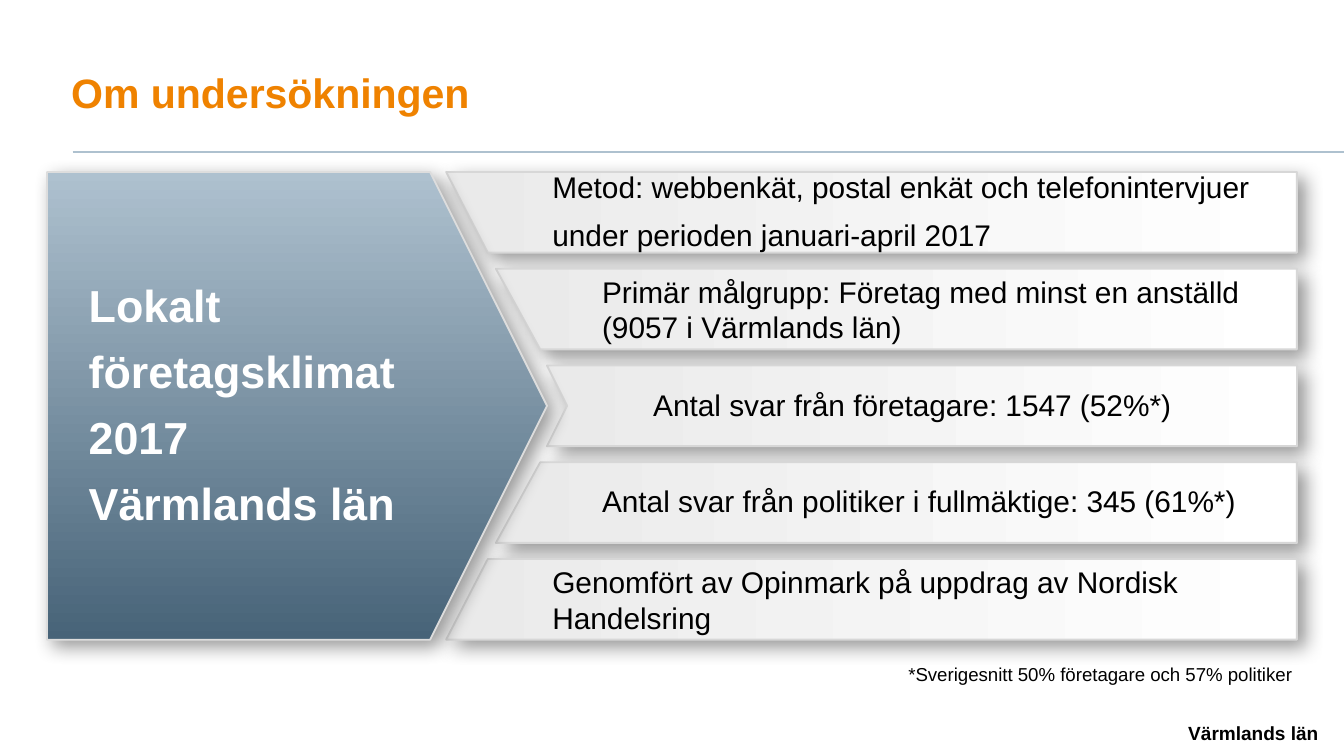
import pptx
import pptx.util
import pptx.dml.color
import pptx.enum.shapes
import pptx.enum.text
import pptx.oxml
import pptx.oxml.ns
from lxml import etree

Inches = pptx.util.Inches
Pt = pptx.util.Pt
qn = pptx.oxml.ns.qn
KIND = pptx.enum.shapes.MSO_SHAPE
ALIGN = pptx.enum.text.PP_ALIGN
ANCHOR = pptx.enum.text.MSO_ANCHOR
SIZE = pptx.enum.text.MSO_AUTO_SIZE

# Text, left edge, slant as (top inset, bottom inset, notch depth), spaced lines
BANDS = [
    ("Metod: webbenkät, postal enkät och telefonintervjuer\n"
     "under perioden januari-april 2017", 3.32, (0, 0.31, 0), True),
    ("Primär målgrupp: Företag med minst en anställd\n"
     "(9057 i Värmlands län)", 3.69, (0, 0.33, 0), False),
    ("Antal svar från företagare: 1547 (52%*)", 4.07, (0, 0, 0.15), True),
    ("Antal svar från politiker i fullmäktige: 345 (61%*)",
     3.69, (0.33, 0, 0), True),
    ("Genomfört av Opinmark på uppdrag av Nordisk Handelsring",
     3.32, (0.31, 0, 0), False),
]


def color(text):
    return pptx.dml.color.RGBColor.from_string(text)


def write(shape, text, size, ink, bold=False, align=ALIGN.LEFT,
          anchor=ANCHOR.MIDDLE, inset=(0, 0, 0, 0), wrap=True, loose=False,
          fit=SIZE.NONE):
    """Fill a shape with text; inset is left, top, right, bottom."""
    frame = shape.text_frame
    frame.text = text
    frame.word_wrap = wrap
    frame.auto_size = fit
    frame.vertical_anchor = anchor
    (frame.margin_left, frame.margin_top,
     frame.margin_right, frame.margin_bottom) = map(Inches, inset)
    for par in frame.paragraphs:
        par.alignment = align
        if loose:
            par.line_spacing = 0.95
            par.space_after = Pt(8)
        for run in par.runs:
            run.font.name = "Arial"
            run.font.size = Pt(size)
            run.font.bold = bold
            run.font.color.rgb = color(ink)


def paint(shape, first, last, angle, edge):
    """Give a shape a gradient, a thin edge and a soft shadow."""
    shape.fill.gradient()
    shape.fill.gradient_angle = angle
    for stop, tone in zip(shape.fill.gradient_stops, (first, last)):
        stop.color.rgb = color(tone)
    shape.line.color.rgb = color(edge)
    shape.line.width = Pt(1)
    shape.shadow.inherit = False
    effects = shape._element.spPr.find(qn("a:effectLst"))
    cast = etree.SubElement(
        effects, qn("a:outerShdw"), blurRad=str(Pt(10)), dist=str(Pt(5)),
        dir="2700000", algn="tl", rotWithShape="0")
    tone = etree.SubElement(cast, qn("a:srgbClr"), val="000000")
    etree.SubElement(tone, qn("a:alpha"), val="40000")


def add_head(slide, left, top, width, height):
    """Title with a rule that runs to the slide edge."""
    title = slide.shapes.title
    title.left, title.top = Inches(left), Inches(top)
    title.width, title.height = Inches(width), Inches(height)
    write(title, "Om undersökningen", 22, "EF8200", bold=True,
          anchor=ANCHOR.BOTTOM, inset=(0, 0, 0, 0.04))
    level = Inches(top + height + 0.22)
    rule = slide.shapes.add_connector(
        pptx.enum.shapes.MSO_CONNECTOR.STRAIGHT,
        Inches(left + 0.01), level, Inches(10), level)
    rule.line.color.rgb = color("AEC1CF")
    rule.line.width = Pt(1)
    etree.SubElement(rule._element.spPr, qn("a:effectLst"))


def add_band(slide, left, top, right, height, text, slant, loose):
    """Bar whose left end follows the point of the arrow."""
    upper, lower, notch = slant
    points = [(left + upper, top), (right, top), (right, top + height),
              (left + lower, top + height)]
    if notch:
        points.append((left + notch, top + height / 2))
    points = [(Inches(x), Inches(y)) for x, y in points]
    form = slide.shapes.build_freeform(*points[0])
    form.add_line_segments(points[1:], close=True)
    band = form.convert_to_shape()
    paint(band, "EAEAEA", "FFFFFF", 0, "D7D7D7")
    write(band, text, 16, "000000", inset=(0.79, 0.04, 0.04, 0.04),
          loose=loose)


def add_body(slide, left, top, width, height):
    """Five bars beside a large arrow."""
    thick = 0.6
    pitch = (height - thick) / (len(BANDS) - 1)
    for row, (text, start, slant, loose) in enumerate(BANDS):
        add_band(slide, start, top + row * pitch, left + width, thick,
                 text, slant, loose)
    arrow = slide.shapes.add_shape(
        KIND.PENTAGON, Inches(left), Inches(top), Inches(3.72),
        Inches(height))
    arrow.adjustments[0] = 0.25
    paint(arrow, "AEC1CF", "476378", 270, "DDDDDD")
    write(arrow, "Lokalt\nföretagsklimat\n2017\nVärmlands län", 24, "FFFFFF",
          bold=True, inset=(0.31, 0, 0, 0), loose=True)


def add_notes(slide, left, top, width, height):
    """Footnote and region name below the bars."""
    note = slide.shapes.add_textbox(
        Inches(left + 1.48), Inches(top), Inches(3.09), Inches(0.27))
    write(note, "*Sverigesnitt 50% företagare och 57% politiker", 10,
          "000000", anchor=ANCHOR.TOP, inset=(0.1, 0.05, 0.1, 0.05),
          wrap=False, fit=SIZE.SHAPE_TO_FIT_TEXT)
    region = slide.shapes.add_textbox(
        Inches(left), Inches(top + height - 0.3), Inches(width), Inches(0.3))
    write(region, "Värmlands län", 10.2, "000000", bold=True,
          align=ALIGN.RIGHT, anchor=ANCHOR.BOTTOM)


def main():
    deck = pptx.Presentation()
    # Widescreen page, 16:9
    deck.slide_width, deck.slide_height = Inches(10), Inches(10 * 9 / 16)
    slide = deck.slides.add_slide(deck.slide_layouts[5])
    add_head(slide, 0.53, 0.15, 7.47, 0.76)
    add_body(slide, 0.35, 1.28, 9.3, 3.48)
    add_notes(slide, 5.18, 4.88, 4.63, 0.66)
    deck.save("out.pptx")


if __name__ == "__main__":
    main()
